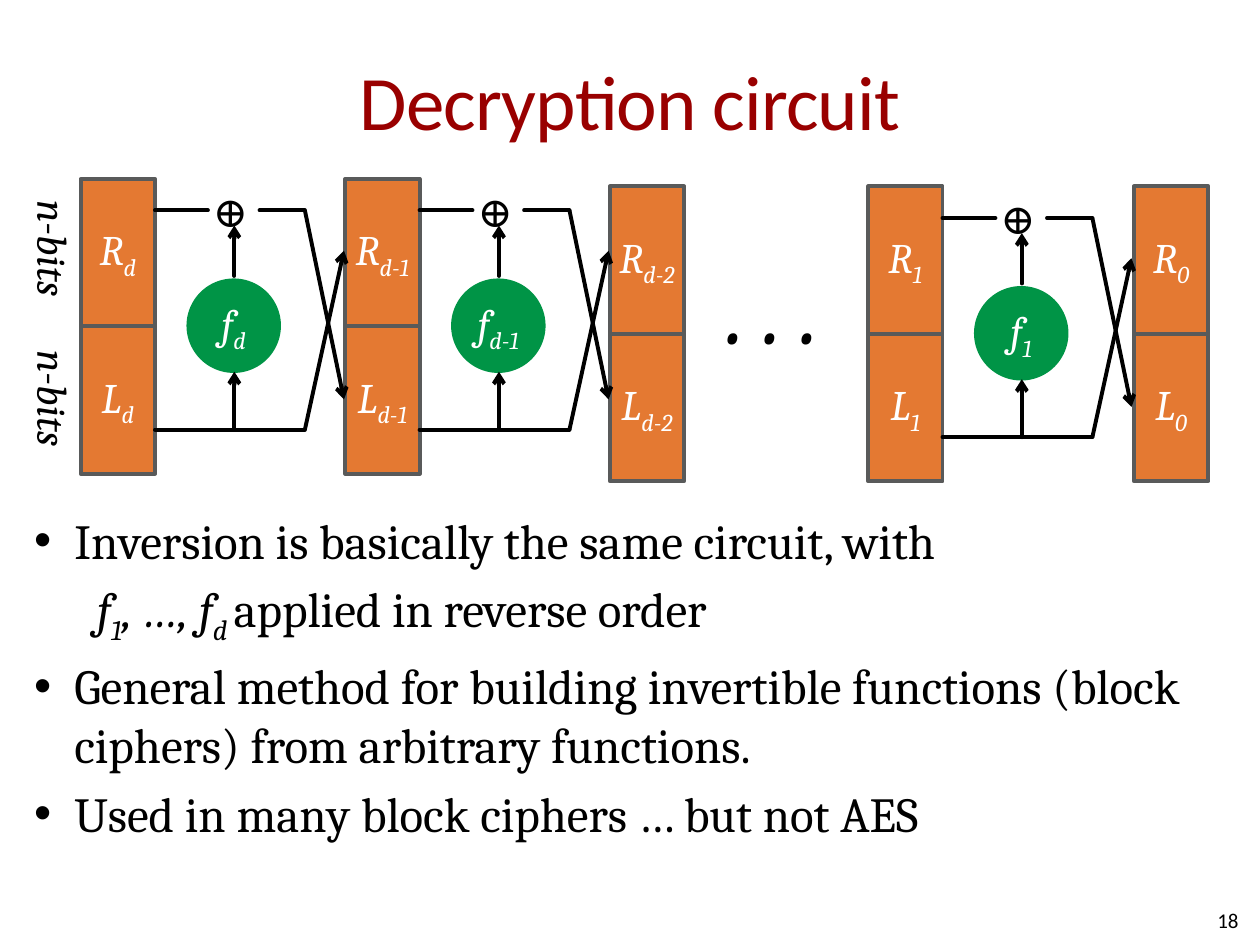
import pptx
import pptx.dml.color
import pptx.enum.shapes
import pptx.enum.text
import pptx.oxml.ns
import pptx.util
from lxml import etree

Inches = pptx.util.Inches
Pt = pptx.util.Pt
SHAPE = pptx.enum.shapes.MSO_SHAPE
ALIGN = pptx.enum.text.PP_ALIGN
ANCHOR = pptx.enum.text.MSO_ANCHOR
FIT = pptx.enum.text.MSO_AUTO_SIZE
qn = pptx.oxml.ns.qn

COLORS = {"title": "990000", "text": "000000", "cell": "E47932",
          "cell_line": "595A5A", "function": "009446", "label": "FFFFFF"}
NO_INSET = dict.fromkeys(
    ("margin_left", "margin_top", "margin_right", "margin_bottom"), 0)
CELL_W, CELL_H, ROUND_W = 0.59, 1.17, 2.09


def rgb(name):
    """Return the named colour."""
    return pptx.dml.color.RGBColor.from_string(COLORS[name])


def apply(obj, **values):
    """Set each given attribute on the object."""
    for name, value in values.items():
        setattr(obj, name, value)


def add_run(p, text, size=24, color="text", font="Cambria", italic=False, sub=False):
    """Append a formatted run to a paragraph."""
    r = p.add_run()
    r.text = text
    apply(r.font, size=Pt(size), name=font, italic=italic)
    r.font.color.rgb = rgb(color)
    if sub:
        r.font._element.set("baseline", "-25000")
    return r


def add_node(s, kind, box, fill, line, letter, index):
    """Add a filled shape labelled with a subscripted letter."""
    sp = s.shapes.add_shape(kind, *map(Inches, box))
    sp.shadow.inherit = False
    sp.fill.solid()
    sp.fill.fore_color.rgb = rgb(fill)
    if line:
        sp.line.color.rgb = rgb(line)
        sp.line.width = Pt(2.25)
    else:
        sp.line.fill.background()
    tf = sp.text_frame
    apply(tf, vertical_anchor=ANCHOR.MIDDLE, word_wrap=True, **NO_INSET)
    p = tf.paragraphs[0]
    p.alignment = ALIGN.CENTER
    add_run(p, letter, color="label", italic=True)
    add_run(p, index, color="label", italic=True, sub=True)


def add_wire(s, x1, y1, x2, y2, arrow=False):
    """Add a straight wire, with an optional arrowhead at its end."""
    sp = s.shapes.add_connector(
        pptx.enum.shapes.MSO_CONNECTOR.STRAIGHT, *map(Inches, (x1, y1, x2, y2)))
    sp.line.color.rgb = rgb("text")
    sp.line.width = Pt(2.25)
    ln = sp.line._get_or_add_ln()
    ln.set("cap", "rnd")
    if arrow:
        etree.SubElement(ln, qn("a:tailEnd"), type="arrow")
    etree.SubElement(sp._element.spPr, qn("a:effectLst"))


def add_label(s, box, text, size=24, italic=False, vertical=False):
    """Add an unwrapped text label."""
    tf = s.shapes.add_textbox(*map(Inches, box)).text_frame
    apply(tf, word_wrap=False, auto_size=FIT.SHAPE_TO_FIT_TEXT, **NO_INSET)
    if vertical:
        tf._txBody.bodyPr.set("vert", "vert")
    add_run(tf.paragraphs[0], text, size, italic=italic)


def add_state(s, x, y, index):
    """Add the stacked R and L halves of one state."""
    for row, letter in enumerate("RL"):
        add_node(s, SHAPE.RECTANGLE, (x, y + row * CELL_H, CELL_W, CELL_H),
                 "cell", "cell_line", letter, index)


def add_round(s, x, y, index):
    """Add the function, wires and XOR that lead out of a state."""
    top, bottom, mid = y + 0.25, y + 1.99, x + 1.22
    bend, end = x + 1.78, x + ROUND_W
    add_node(s, SHAPE.OVAL, (x + 0.84, y + 0.79, 0.75, 0.75),
             "function", None, "f", index)
    add_wire(s, x + CELL_W, bottom, bend, bottom)
    add_wire(s, x + CELL_W, top, x + 1.01, top)
    add_wire(s, x + 1.42, top, bend, top)
    add_wire(s, bend, bottom, end, y + 0.57, arrow=True)
    add_wire(s, bend, top, end, y + 1.75, arrow=True)
    add_wire(s, mid, bottom, mid, y + 1.53, arrow=True)
    add_wire(s, mid, y + 0.77, mid, y + 0.37, arrow=True)
    add_label(s, (x + 1.05, y + 0.05, 0.33, 0.4), "⊕")


def add_circuit(s, left, top):
    """Add the whole decryption circuit from its top left corner."""
    states = [(0.41, 0, "d", True), (2.51, 0, "d-1", True),
              (4.61, 0.06, "d-2", False), (6.66, 0.06, "1", True),
              (8.77, 0.06, "0", False)]
    for dx, dy, index, _ in states:
        add_state(s, left + dx, top + dy, index)
    for dx, dy, index, has_round in states:
        if has_round:
            add_round(s, left + dx, top + dy, index)
    for dy in (0.17, 1.36):
        add_label(s, (left, top + dy, 0.4, 0.8), "n-bits", italic=True, vertical=True)
    add_label(s, (left + 5.49, top + 0.96, 0.8, 0.54), "• • •", 32, italic=True)


def place(sp, box):
    """Move a placeholder to a box and return its text frame."""
    apply(sp, **dict(zip(("left", "top", "width", "height"), map(Inches, box))))
    apply(sp.text_frame, word_wrap=True, auto_size=FIT.NONE)
    return sp.text_frame


def add_title(s, box):
    """Fill the title placeholder."""
    tf = place(s.shapes.title, box)
    apply(tf, margin_left=0, margin_right=0, vertical_anchor=ANCHOR.MIDDLE)
    p = tf.paragraphs[0]
    p.alignment = ALIGN.CENTER
    r = add_run(p, "Decryption circuit", 44, "title", "Calibri")
    r.font._element.set("spc", "-50")


def add_body(s, box):
    """Fill the body placeholder with the bulleted notes."""
    tf = place(s.placeholders[1], box)
    italic, sub = {"italic": True}, {"italic": True, "sub": True}
    notes = [
        (True, [("Inversion is basically the same circuit, with", {})]),
        (False, [("f", italic), ("1", sub), (", …, f", italic), ("d ", sub),
                 ("applied in reverse order", {})]),
        (True, [("General method for building invertible functions "
                 "(block ciphers) from arbitrary functions.", {})]),
        (True, [("Used in many block ciphers … but not AES", {})]),
    ]
    for i, (bullet, runs) in enumerate(notes):
        p = tf.add_paragraph() if i else tf.paragraphs[0]
        p.space_before = Pt(5.6)
        pPr = p._p.get_or_add_pPr()
        pPr.set("marL", str(Inches(0.32 if bullet else 0.5)))
        pPr.set("indent", str(Inches(-0.32 if bullet else 0)))
        if bullet:
            etree.SubElement(pPr, qn("a:buChar"), char="•")
        else:
            etree.SubElement(pPr, qn("a:buNone"))
        for text, style in runs:
            add_run(p, text, 28, **style)


def add_page_number(s, box):
    """Add the right-aligned page number."""
    tf = s.shapes.add_textbox(*map(Inches, box)).text_frame
    apply(tf, word_wrap=True, vertical_anchor=ANCHOR.MIDDLE, **NO_INSET)
    p = tf.paragraphs[0]
    p.alignment = ALIGN.RIGHT
    add_run(p, "18", 12, font="Calibri")


def main():
    """Build and save the slide."""
    prs = pptx.Presentation()
    apply(prs, slide_width=Inches(10), slide_height=Inches(7.5))
    s = prs.slides.add_slide(prs.slide_layouts[1])
    add_title(s, (0.5, 0.17, 9, 1.25))
    add_circuit(s, 0.23, 1.42)
    add_body(s, (0.17, 4, 9.67, 3.42))
    add_page_number(s, (7.5, 7.1, 2.33, 0.4))
    prs.save("out.pptx")


if __name__ == "__main__":
    main()
